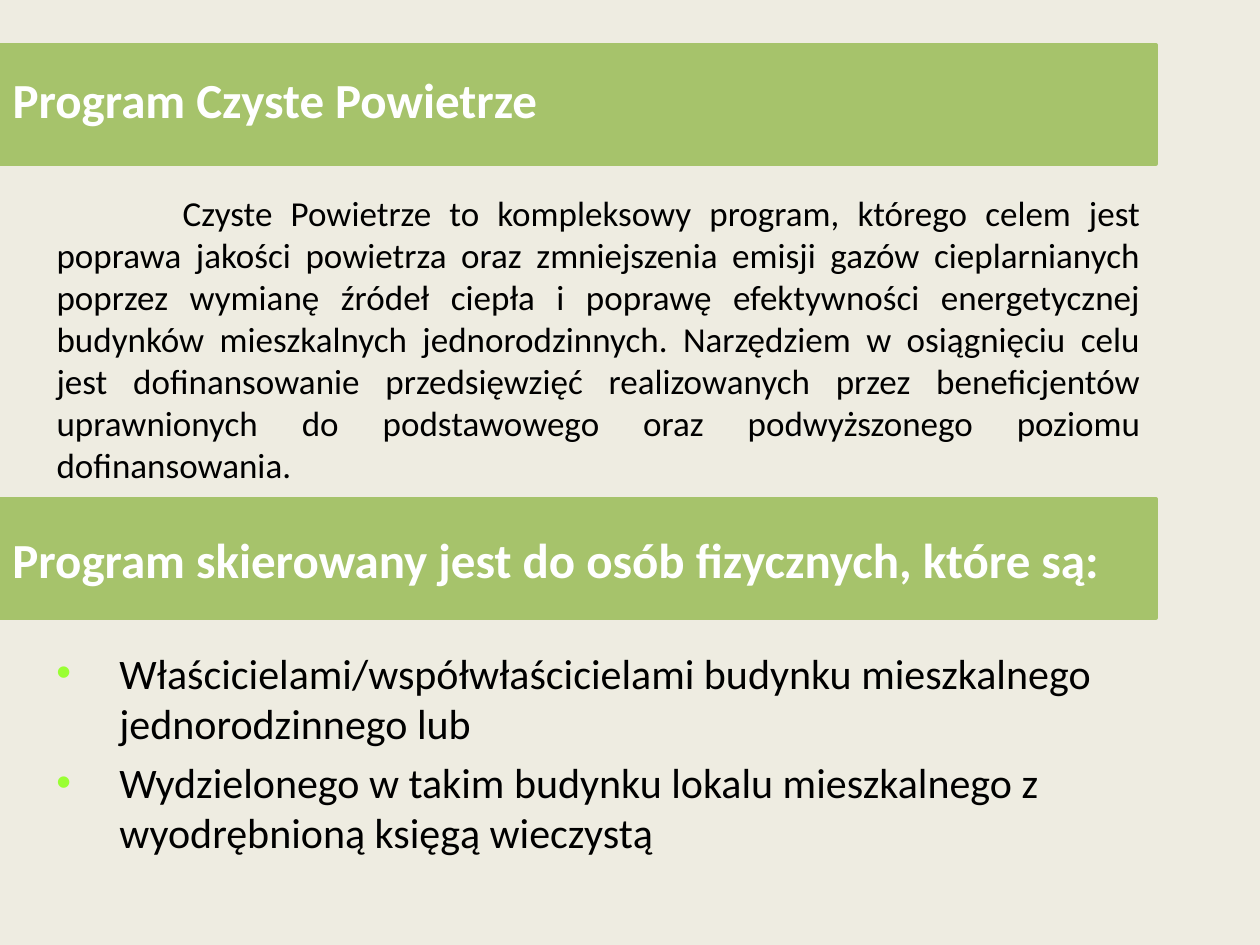
"""Build the slide that introduces the Czyste Powietrze program."""
import pptx
import pptx.util
import pptx.dml.color
import pptx.enum.shapes
import pptx.enum.text
import lxml.etree
from dataclasses import dataclass


@dataclass(frozen=True)
class Theme:
    font: str = "Calibri"
    back: str = "EEECE1"
    bar: str = "A6C36B"
    light: str = "FFFFFF"
    dark: str = "000000"
    dot: str = "99FF33"
    head: int = 28
    item: int = 24
    body: int = 20
    line: int = 2


theme = Theme()
rgb = pptx.dml.color.RGBColor.from_string
Align = pptx.enum.text.PP_ALIGN
Anchor = pptx.enum.text.MSO_ANCHOR
Fit = pptx.enum.text.MSO_AUTO_SIZE


def px(n):
    return pptx.util.Inches(n / 126)


def write(shape, box, text, size, color, bold=False, align=Align.LEFT, anchor=Anchor.TOP):
    shape.left, shape.top, shape.width, shape.height = map(px, box)
    frame = shape.text_frame
    frame.text = text
    frame.word_wrap = True
    frame.auto_size = Fit.NONE
    frame.vertical_anchor = anchor
    for para in frame.paragraphs:
        para.alignment = align
        for run in para.runs:
            run.font.name = theme.font
            run.font.size = pptx.util.Pt(size)
            run.font.bold = bold
            run.font.color.rgb = rgb(color)
    return frame.paragraphs


deck = pptx.Presentation()
deck.slide_width, deck.slide_height = px(1260), px(945)
slide = deck.slides.add_slide(deck.slide_layouts[0])
slide.background.fill.solid()
slide.background.fill.fore_color.rgb = rgb(theme.back)
shapes = slide.shapes
title, intro = shapes.title, slide.placeholders[1]

for top in (45, 499):
    bar = shapes.add_shape(pptx.enum.shapes.MSO_SHAPE.RECTANGLE, 0, px(top), px(1156), px(119))
    bar.shadow.inherit = False
    bar.fill.solid()
    bar.fill.fore_color.rgb = rgb(theme.bar)
    bar.line.color.rgb = rgb(theme.bar)
    bar.line.width = pptx.util.Pt(theme.line)

title.element.getparent().append(title.element)
write(title, (0, 29, 1002, 139), "Program Czyste Powietrze",
      theme.head, theme.light, bold=True, anchor=Anchor.MIDDLE)

lead = write(
    intro, (44, 185, 1109, 228),
    "Czyste Powietrze to kompleksowy program, którego celem jest poprawa jakości "
    "powietrza oraz zmniejszenia emisji gazów cieplarnianych poprzez wymianę źródeł "
    "ciepła i poprawę efektywności energetycznej budynków mieszkalnych "
    "jednorodzinnych. Narzędziem w osiągnięciu celu jest dofinansowanie "
    "przedsięwzięć realizowanych przez beneficjentów uprawnionych do podstawowego "
    "oraz podwyższonego poziomu dofinansowania.",
    theme.body, theme.dark, align=Align.JUSTIFY)
lead[0]._p.get_or_add_pPr().set("indent", str(px(126)))

group = shapes.add_textbox(0, 0, 0, 0)
write(group, (0, 523, 1156, 72), "Program skierowany jest do osób fizycznych, które są:",
      theme.head, theme.light, bold=True)

owners = shapes.add_textbox(0, 0, 0, 0)
items = write(
    owners, (44, 641, 1111, 227),
    "Właścicielami/współwłaścicielami budynku mieszkalnego jednorodzinnego lub\n"
    "Wydzielonego w takim budynku lokalu mieszkalnego z wyodrębnioną księgą wieczystą",
    theme.item, theme.dark)
ns = "{http://schemas.openxmlformats.org/drawingml/2006/main}"
for item in items:
    item.space_before = pptx.util.Pt(4.8)
    props = item._p.get_or_add_pPr()
    props.set("marL", str(px(63)))
    props.set("indent", str(-px(63)))
    tint = lxml.etree.SubElement(props, ns + "buClr")
    lxml.etree.SubElement(tint, ns + "srgbClr", val=theme.dot)
    lxml.etree.SubElement(props, ns + "buFont", typeface="Arial")
    lxml.etree.SubElement(props, ns + "buChar", char="•")

deck.save("out.pptx")
